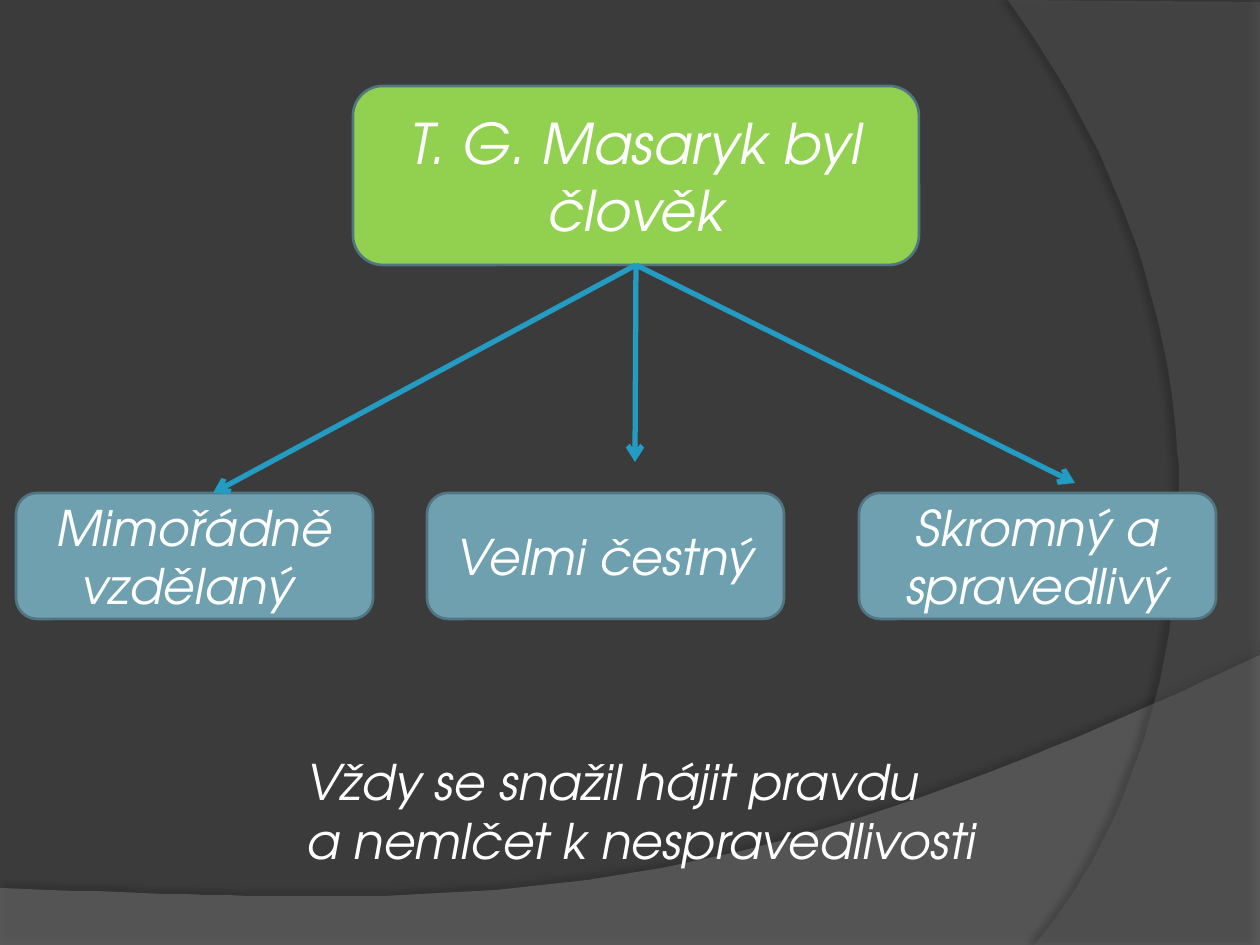
from lxml import etree
from pptx import Presentation, util as u
from pptx.dml.color import RGBColor
from pptx.enum import shapes as s, text as t
from pptx.oxml.ns import qn

PX = 914400 / 126
FONT = "TeX Gyre Adventor"
HUES = {"back": "3B3B3B", "wave": "7F7F7F", "arc": "5E5E5E", "green": "92D050",
        "blue": "6EA0B0", "edge": "517682", "arrow": "239BC2",
        "white": "FFFFFF", "shade": "000000"}
RGB = {name: RGBColor.from_string(hue) for name, hue in HUES.items()}


def emu(*px):
    return [u.Emu(round(n * PX)) for n in px]


def write(frame, words, size, align):
    frame.word_wrap = True
    frame.text = words
    for par in frame.paragraphs:
        par.alignment = align
        for run in par.runs:
            run.font.name = FONT
            run.font.size = u.Pt(size)
            run.font.italic = True
            run.font.color.rgb = RGB["white"]


deck = Presentation()
deck.slide_width, deck.slide_height = emu(1260, 945)
slide = deck.slides.add_slide(deck.slide_layouts[6])
slide.background.fill.solid()
slide.background.fill.fore_color.rgb = RGB["back"]
tree = slide.shapes

# Curved background bands: straight corners, then one Bezier curve
bands = [
    ("wave", [(0, 888), (0, 945), (1260, 945), (1260, 655)],
     [(704, 919), (493, 906), (0, 888)], 45, (35, 4, 3.5, 270)),
    ("arc", [(1260, 2), (1260, 945), (1034, 945)],
     [(1178, 780), (1283, 378), (1008, 0)], 40, (45, 4, 4, 180)),
]
for hue, corners, bend, alpha, (dark, blur, dist, angle) in bands:
    knots = [corners[-1]] + bend
    curve = []
    for step in range(1, 61):
        k = step / 60
        parts = ((1 - k) ** 3, 3 * k * (1 - k) ** 2, 3 * k * k * (1 - k), k ** 3)
        curve.append([sum(p * c for p, c in zip(parts, axis)) for axis in zip(*knots)])
    path = tree.build_freeform(*corners[0], scale=PX)
    path.add_line_segments(corners[1:] + curve, close=True)
    band = path.convert_to_shape()
    band.fill.solid()
    band.fill.fore_color.rgb = RGB[hue]
    band.line.fill.background()
    band.shadow.inherit = False
    props = band._element.spPr
    tint = props.find(qn("a:solidFill")).find(qn("a:srgbClr"))
    etree.SubElement(tint, qn("a:alpha"), val=str(alpha * 1000))
    cast = etree.SubElement(props.find(qn("a:effectLst")), qn("a:outerShdw"),
                            blurRad=str(u.Pt(blur)), dist=str(u.Pt(dist)),
                            dir=str(angle * 60000), algn="ctr", rotWithShape="0")
    tone = etree.SubElement(cast, qn("a:srgbClr"), val=HUES["shade"])
    etree.SubElement(tone, qn("a:alpha"), val=str(dark * 1000))

# Topic box first, then the three traits
boxes = [
    ("T. G. Masaryk byl člověk", 353, 86, 566, 179, "green", 32),
    ("Mimořádně vzdělaný ", 16, 493, 357, 126, "blue", 28),
    ("Velmi čestný", 427, 493, 357, 126, "blue", 28),
    ("Skromný a spravedlivý", 859, 493, 357, 126, "blue", 28),
]
cards = []
for words, x, y, w, h, hue, size in boxes:
    card = tree.add_shape(s.MSO_SHAPE.ROUNDED_RECTANGLE, *emu(x, y, w, h))
    card.shadow.inherit = False
    card.fill.solid()
    card.fill.fore_color.rgb = RGB[hue]
    card.line.color.rgb = RGB["edge"]
    card.line.width = u.Pt(1.5)
    card.text_frame.vertical_anchor = t.MSO_ANCHOR.MIDDLE
    write(card.text_frame, words, size, t.PP_ALIGN.CENTER)
    cards.append(card)

# Arrows fan out from the bottom of the topic box
for x, y in [(213, 493), (635, 462), (1075, 483)]:
    arrow = tree.add_connector(s.MSO_CONNECTOR.STRAIGHT, *emu(635, 265, x, y))
    arrow.begin_connect(cards[0], 2)
    arrow.line.color.rgb = RGB["arrow"]
    arrow.line.width = u.Pt(3)
    etree.SubElement(arrow.line._get_or_add_ln(), qn("a:tailEnd"), type="arrow")
    etree.SubElement(arrow._element.spPr, qn("a:effectLst"))

motto = tree.add_textbox(*emu(294, 745, 980, 131))
write(motto.text_frame, "Vždy se snažil hájit pravdu\na nemlčet k nespravedlivosti",
      28, t.PP_ALIGN.LEFT)

deck.save("out.pptx")
